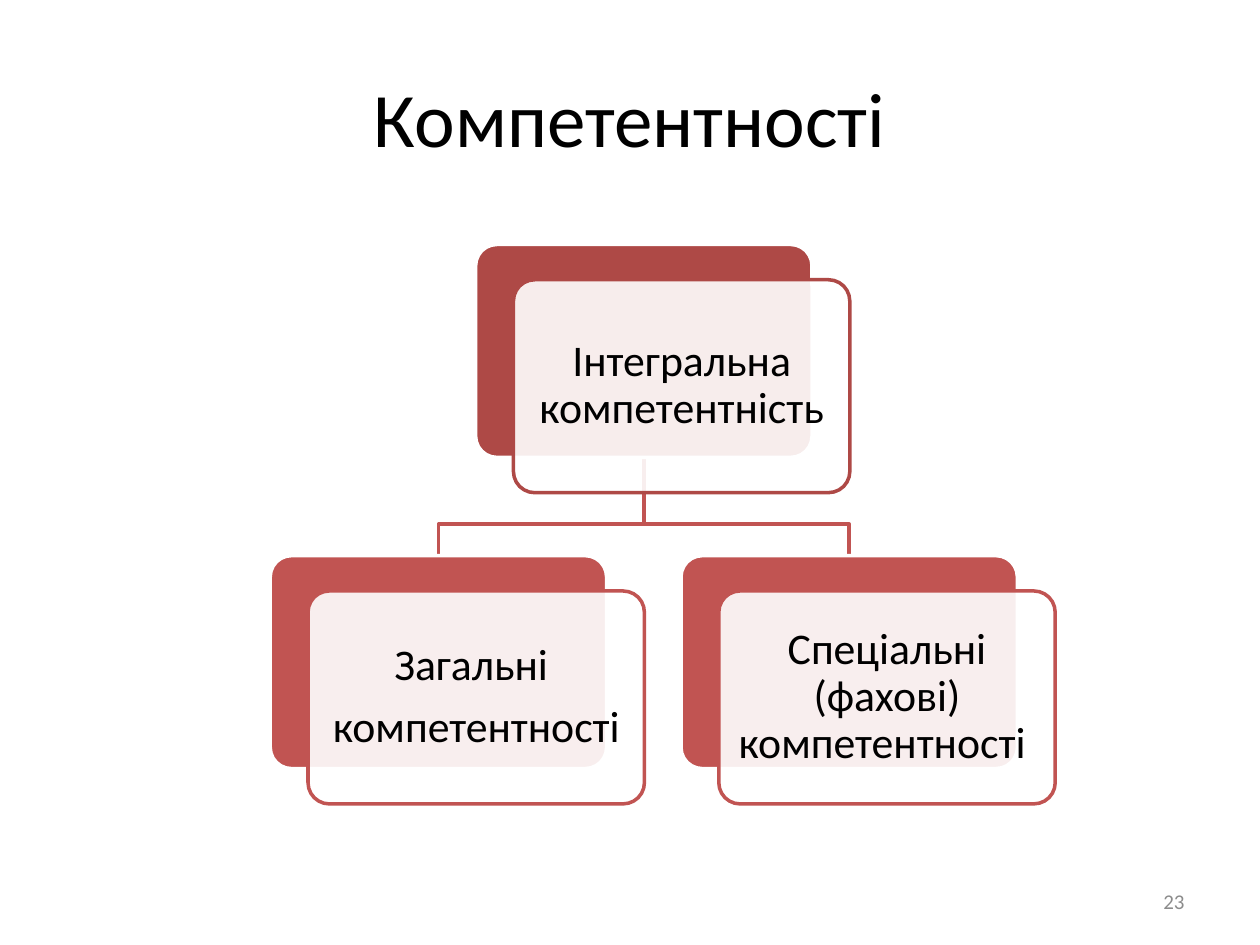
from dataclasses import dataclass

from lxml import etree
from pptx import Presentation
from pptx.dml.color import RGBColor as RGB
from pptx.enum.shapes import MSO_SHAPE as SHAPE
from pptx.enum.text import MSO_ANCHOR as ANCHOR, PP_ALIGN as ALIGN
from pptx.oxml.ns import qn
from pptx.util import Inches, Pt

BOX_W, BOX_H = 2.67, 1.69
CARD_DX, CARD_DY = 0.3, 0.28  # offset of the front card from its backing
TOP_Y, CHILD_Y, BUS_Y = 1.94, 4.41, 4.16
CENTER_X, CHILD_DX = 5.11, 1.63


@dataclass(frozen=True)
class Theme:
    font: str = "Calibri"
    text: RGB = RGB(0x00, 0x00, 0x00)
    muted: RGB = RGB(0x8C, 0x8C, 0x8C)
    white: RGB = RGB(0xFF, 0xFF, 0xFF)
    parent: RGB = RGB(0xAE, 0x49, 0x46)
    child: RGB = RGB(0xC1, 0x54, 0x52)
    title_size: int = 44
    node_size: int = 25
    number_size: int = 12
    line: int = 2


class SlideBuilder:
    def __init__(self, slide, theme):
        self.slide, self.theme = slide, theme

    def style(self, p, size, color, align):
        p.alignment = align
        p.font.name, p.font.size = self.theme.font, Pt(size)
        p.font.color.rgb = color

    def title(self, text):
        sp = self.slide.shapes.title
        sp.left, sp.top, sp.width, sp.height = map(Inches, (0.5, 0.3, 9, 1.25))
        sp.text_frame.text = text
        sp.text_frame.vertical_anchor = ANCHOR.MIDDLE
        self.style(sp.text_frame.paragraphs[0], self.theme.title_size,
                   self.theme.text, ALIGN.CENTER)

    def page_number(self, text):
        sp = self.slide.shapes.add_textbox(*map(Inches, (7.17, 6.95, 2.33, 0.4)))
        tf = sp.text_frame
        tf.word_wrap, tf.vertical_anchor = True, ANCHOR.MIDDLE
        tf.text = text
        self.style(tf.paragraphs[0], self.theme.number_size,
                   self.theme.muted, ALIGN.RIGHT)

    def branch(self, child_x):
        """Draw the elbow line from the parent down to one child."""
        points = [(CENTER_X, TOP_Y + BOX_H), (CENTER_X, BUS_Y),
                  (child_x, BUS_Y), (child_x, CHILD_Y)]
        points = [(Inches(x), Inches(y)) for x, y in points]
        fb = self.slide.shapes.build_freeform(*points[0])
        fb.add_line_segments(points[1:], close=False)
        sp = fb.convert_to_shape()
        sp.shadow.inherit = False
        sp.fill.background()
        sp.line.color.rgb, sp.line.width = self.theme.child, Pt(self.theme.line)

    def round_box(self, x, y, fill, line):
        sp = self.slide.shapes.add_shape(
            SHAPE.ROUNDED_RECTANGLE, *map(Inches, (x, y, BOX_W, BOX_H)))
        sp.adjustments[0] = 0.1
        sp.shadow.inherit = False
        sp.fill.solid()
        sp.fill.fore_color.rgb = fill
        sp.line.color.rgb, sp.line.width = line, Pt(self.theme.line)
        return sp

    def node(self, center_x, y, color, lines, space_after):
        """Draw a coloured backing and the translucent text card over it."""
        x, t = center_x - BOX_W / 2, self.theme
        self.round_box(x, y, color, t.white)
        card = self.round_box(x + CARD_DX, y + CARD_DY, t.white, color)
        clr = card.fill._xPr.find(qn("a:solidFill"))[0]
        etree.SubElement(clr, qn("a:alpha")).set("val", "90000")

        tf = card.text_frame
        tf.word_wrap, tf.vertical_anchor = True, ANCHOR.MIDDLE
        # The rounded corners already inset the text by about 0.05 inch.
        tf.margin_left = tf.margin_right = Inches(0.05)
        tf.margin_top = tf.margin_bottom = Inches(0.05)
        tf.text = "\n".join(lines)
        for p in tf.paragraphs:
            self.style(p, t.node_size, t.text, ALIGN.CENTER)
            p.line_spacing, p.space_after = 0.9, Pt(space_after)


def main():
    prs = Presentation()
    prs.slide_width, prs.slide_height = Inches(10), Inches(7.5)
    theme = Theme()
    s = SlideBuilder(prs.slides.add_slide(prs.slide_layouts[5]), theme)

    s.title("Компетентності")
    s.page_number("23")

    left_x, right_x = CENTER_X - CHILD_DX, CENTER_X + CHILD_DX
    for x in (right_x, left_x):
        s.branch(x)
    s.node(CENTER_X, TOP_Y, theme.parent, ["Інтегральна компетентність"], 8.75)
    s.node(left_x, CHILD_Y, theme.child, ["Загальні ", "компетентності"], 8.75)
    s.node(right_x, CHILD_Y, theme.child,
           ["Спеціальні (фахові)", "компетентності "], 0)

    prs.save("out.pptx")


if __name__ == "__main__":
    main()
